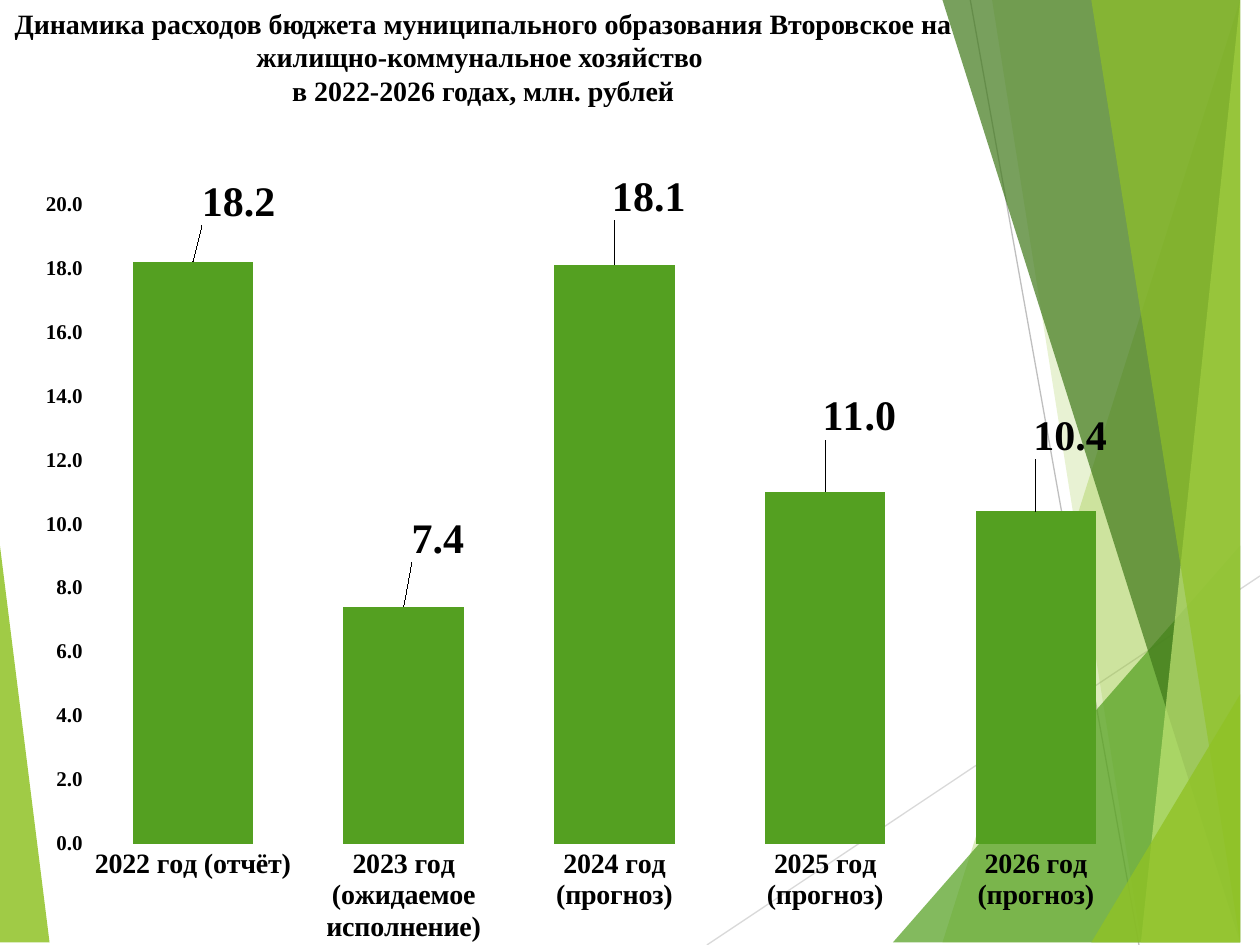
from lxml import etree
from pptx import Presentation, util as u
from pptx.chart.data import CategoryChartData
from pptx.dml.color import RGBColor
from pptx.enum import chart as ch, shapes, text
from pptx.oxml.ns import qn

LIME = RGBColor(0x90, 0xC2, 0x26)
GREEN = RGBColor(0x54, 0xA0, 0x21)
DARK = RGBColor(0x3F, 0x78, 0x19)
PALE = RGBColor(0xC0, 0xE4, 0x74)
GREY = RGBColor(0xBF, 0xBF, 0xBF)
SILVER = RGBColor(0xD9, 0xD9, 0xD9)
BLACK = RGBColor(0, 0, 0)
SERIF = "Times New Roman"

W, H = 25.4, 19.05
TITLE = ("Динамика расходов бюджета муниципального образования Второвское "
         "на жилищно-коммунальное хозяйство \vв 2022-2026 годах, млн. рублей")

# Grey lines: start, end, colour
LINES = [
    ((14.25, H), (W, 11.61), SILVER),
    ((19.56, 0), (22.96, H), GREY),
]
# Facets from back to front: corners, colour, opacity in percent
FACETS = [
    ([(0, 11.15), (1.24, H), (0, H)], LIME, 85),
    ([(24.77, 0), (19.15, H), (W, H), (W, 0)], LIME, 30),
    ([(20.02, 0), (23.34, H), (W, H), (W, 0)], LIME, 20),
    ([(18.44, H), (W, 10.9), (W, H)], GREEN, 72),
    ([(19.48, 0), (24.64, H), (W, H), (W, 0)], DARK, 70),
    ([(24.92, 0), (23.04, H), (W, H), (W, 0)], PALE, 70),
    ([(22.43, 0), (25.04, H), (W, H), (25.35, 0)], LIME, 65),
    ([(22.38, H), (W, 13.59), (W, H)], LIME, 80),
]
# Category, value, label shift as a share of the chart size
DATA = [
    ("2022 год (отчёт)", 18.2, (0.04, -0.04)),
    ("2023 год (ожидаемое исполнение)", 7.4, (0.03, -0.05)),
    ("2024 год (прогноз)", 18.1, (0.03, -0.05)),
    ("2025 год (прогноз)", 11.0, (0.03, -0.06)),
    ("2026 год (прогноз)", 10.4, (0.03, -0.06)),
]


def style(font, size):
    font.name, font.size, font.bold = SERIF, u.Pt(size), True
    font.color.rgb = BLACK


def add_line(slide, start, end, color):
    line = slide.shapes.add_connector(
        shapes.MSO_CONNECTOR.STRAIGHT, *map(u.Cm, start + end))
    line.line.color.rgb = color
    line.line.width = u.Pt(0.75)
    etree.SubElement(line.element.spPr, qn("a:effectLst"))


def add_facet(slide, points, color, alpha):
    form = slide.shapes.build_freeform(*points[0], scale=u.Cm(1))
    form.add_line_segments(points[1:], close=True)
    facet = form.convert_to_shape()
    facet.shadow.inherit = False
    facet.line.fill.background()
    facet.fill.solid()
    facet.fill.fore_color.rgb = color
    tint = next(facet.element.spPr.iter(qn("a:srgbClr")))
    etree.SubElement(tint, qn("a:alpha"), val=str(alpha * 1000))


def set_title(slide):
    title = slide.shapes.title
    title.element.getparent().append(title.element)  # in front of the facets
    title.left, title.top = 0, 0
    title.width, title.height = u.Cm(19.48), u.Cm(3.07)
    frame = title.text_frame
    frame.text = TITLE
    frame.word_wrap = True
    frame.auto_size = text.MSO_AUTO_SIZE.NONE
    frame.vertical_anchor = text.MSO_ANCHOR.TOP
    para = frame.paragraphs[0]
    para.alignment = text.PP_ALIGN.CENTER
    for run in para.runs:
        style(run.font, 16)


def make_layout(**parts):
    """Return a manual chart layout element."""
    layout = etree.Element(qn("c:layout"))
    manual = etree.SubElement(layout, qn("c:manualLayout"))
    for tag, val in parts.items():
        etree.SubElement(manual, qn("c:" + tag), val=str(val))
    return layout


def set_axis(axis, size):
    style(axis.tick_labels.font, size)
    axis.major_tick_mark = axis.minor_tick_mark = ch.XL_TICK_MARK.NONE
    axis.has_major_gridlines = False
    axis.format.line.fill.background()


def set_labels(chart, plot):
    points = plot.series[0].points
    for i in range(len(DATA)):
        label = points[i].data_label
        style(label.font, 24)
        label.position = ch.XL_LABEL_POSITION.OUTSIDE_END
    for node, (_, _, (x, y)) in zip(chart.element.iter(qn("c:dLbl")), DATA):
        node.insert(1, make_layout(x=x, y=y))


def add_bars(slide):
    data = CategoryChartData(number_format="0.0")
    data.categories = [row[0] for row in DATA]
    data.add_series("Series 1", [row[1] for row in DATA])
    chart = slide.shapes.add_chart(
        ch.XL_CHART_TYPE.COLUMN_CLUSTERED, u.Cm(0.38), u.Cm(3.33),
        u.Cm(23.09), u.Cm(15.72), data).chart
    chart.has_legend = chart.has_title = False
    chart.font.name, chart.font.size = "Roboto", u.Pt(10)
    chart.font.color.rgb = BLACK

    plot = chart.plots[0]
    plot.gap_width = 75
    plot.vary_by_categories = False
    fill = plot.series[0].format.fill
    fill.solid()
    fill.fore_color.rgb = GREEN
    set_labels(chart, plot)

    set_axis(chart.category_axis, 16)
    scale = chart.value_axis
    set_axis(scale, 12)
    scale.minimum_scale, scale.maximum_scale, scale.major_unit = 0, 20, 2
    scale.tick_labels.number_format = "0.0"
    scale.tick_labels.number_format_is_linked = False

    area = next(chart.element.iter(qn("c:plotArea")))
    for old in area.findall(qn("c:layout")):
        area.remove(old)
    area.insert(0, make_layout(
        layoutTarget="inner", xMode="edge", yMode="edge",
        x=0.06, y=0.05, w=0.92, h=0.82))


def main():
    prs = Presentation()
    prs.slide_width, prs.slide_height = u.Cm(W), u.Cm(H)
    slide = prs.slides.add_slide(prs.slide_layouts[5])
    add_facet(slide, *FACETS[0])
    for line in LINES:
        add_line(slide, *line)
    for facet in FACETS[1:]:
        add_facet(slide, *facet)
    set_title(slide)
    add_bars(slide)
    prs.save("out.pptx")


if __name__ == "__main__":
    main()
